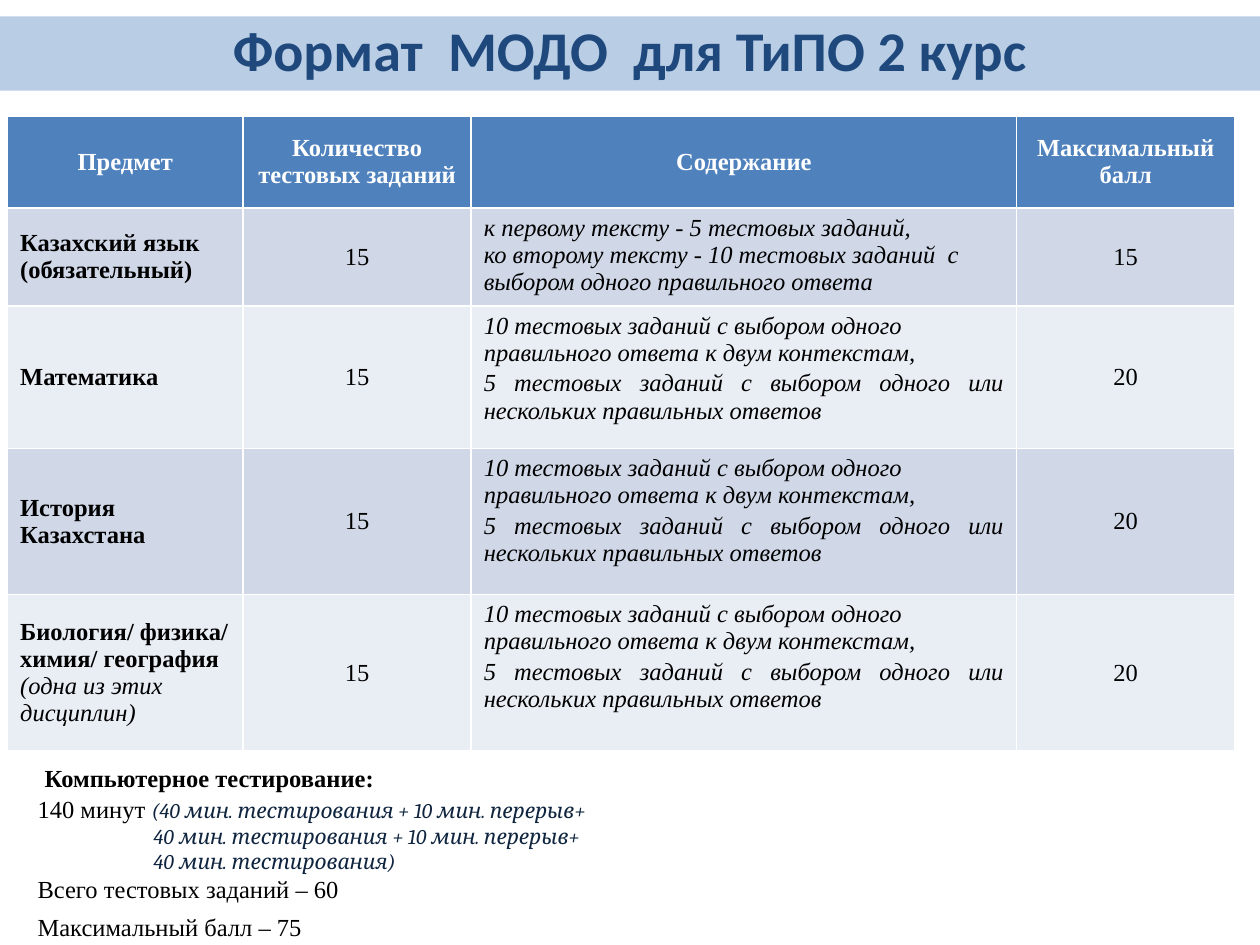
from pptx import Presentation
from pptx import util as u
from pptx.dml.color import RGBColor
from pptx.enum import text

BLACK = RGBColor(0x00, 0x00, 0x00)
WHITE = RGBColor(0xFF, 0xFF, 0xFF)
NAVY = RGBColor(0x1F, 0x49, 0x7D)
INK = RGBColor(0x0F, 0x24, 0x3E)
BAND = RGBColor(0xB9, 0xCD, 0xE5)
HEAD = RGBColor(0x4F, 0x81, 0xBD)
ROWS = [RGBColor(0xD0, 0xD8, 0xE8), RGBColor(0xE9, 0xED, 0xF4)]

SERIF = "Times New Roman"
LEFT = text.PP_ALIGN.LEFT
MID = text.PP_ALIGN.CENTER
FULL = text.PP_ALIGN.JUSTIFY

WIDTHS = [1.87, 1.81, 4.33, 1.73]
HEIGHTS = [0.73, 0.78, 1.13, 1.16, 1.24]
HEADS = ["Предмет", "Количество тестовых заданий", "Содержание", "Максимальный балл"]
KAZAKH = [
    "к первому тексту - 5 тестовых заданий,",
    "ко второму тексту - 10 тестовых заданий  с выбором одного правильного ответа",
]
TASKS = [
    "10 тестовых заданий с выбором одного правильного ответа к двум контекстам,",
    "5 тестовых заданий с выбором одного или нескольких правильных ответов",
]
TOPICS = [
    ("Казахский язык (обязательный)", "", KAZAKH, "15"),
    ("Математика", "", TASKS, "20"),
    ("История Казахстана", "", TASKS, "20"),
    ("Биология/ физика/ химия/ география ", "(одна из этих дисциплин)", TASKS, "20"),
]


def style(font, size=14, name=SERIF, color=BLACK, bold=False, slant=False):
    font.size = u.Pt(size)
    font.name = name
    font.color.rgb = color
    font.bold = bold
    font.italic = slant


def add_run(para, words, **look):
    run = para.add_run()
    run.text = words
    style(run.font, **look)


def add_line(frame, words="", align=LEFT, **look):
    para = frame.paragraphs[0]
    if para.runs:
        para = frame.add_paragraph()
    para.alignment = align
    if words:
        para.text = words
        style(para.font, **look)
    return para


def fill_cell(cell, color, middle=True):
    cell.fill.solid()
    cell.fill.fore_color.rgb = color
    if middle:
        cell.vertical_anchor = text.MSO_ANCHOR.MIDDLE
    return cell.text_frame


def add_title(slide):
    title = slide.shapes.title
    title.left, title.top = u.Inches(0), u.Inches(0.13)
    title.width, title.height = u.Inches(10), u.Inches(0.59)
    title.fill.solid()
    title.fill.fore_color.rgb = BAND
    para = add_line(title.text_frame, "Формат  МОДО  для ТиПО 2 курс", MID,
                    size=32, name="Calibri", color=NAVY, bold=True)
    para.line_spacing = 0.9


def add_topic(table, row, topic):
    name, note, tasks, score = topic
    color = ROWS[(row - 1) % 2]
    para = add_line(fill_cell(table.cell(row, 0), color))
    add_run(para, name, bold=True)
    if note:
        add_run(para, note, slant=True)
    for col, value in ((1, "15"), (3, score)):
        add_line(fill_cell(table.cell(row, col), color), value, MID)
    frame = fill_cell(table.cell(row, 2), color, middle=False)
    first = add_line(frame, tasks[0], slant=True)
    paired = tasks is TASKS
    add_line(frame, tasks[1], FULL if paired else LEFT, slant=True)
    if paired:
        first.space_after = u.Pt(2)


def add_grid(slide):
    table = slide.shapes.add_table(
        len(HEIGHTS), len(WIDTHS), u.Inches(0.06), u.Inches(0.92),
        u.Inches(sum(WIDTHS)), u.Inches(sum(HEIGHTS))).table
    for col, width in zip(table.columns, WIDTHS):
        col.width = u.Inches(width)
    for row, height in zip(table.rows, HEIGHTS):
        row.height = u.Inches(height)
    for col, head in enumerate(HEADS):
        add_line(fill_cell(table.cell(0, col), HEAD), head, MID, color=WHITE, bold=True)
    for row, topic in enumerate(TOPICS, 1):
        add_topic(table, row, topic)


def add_notes(slide):
    box = slide.shapes.add_textbox(u.Inches(0.2), u.Inches(5.95), u.Inches(9.53), u.Inches(1.58))
    frame = box.text_frame
    frame.word_wrap = True
    para = add_line(frame)
    add_run(para, " ", size=18, name="Calibri", bold=True)
    add_run(para, "Компьютерное тестирование:", bold=True)
    time = dict(size=12, name="Cambria", color=INK, slant=True)
    para = add_line(frame)
    add_run(para, "140 минут ")
    add_run(para, "(40 мин. тестирования + 10 мин. перерыв+", **time)
    for words in ("40 мин. тестирования + 10 мин. перерыв+", "40 мин. тестирования)"):
        para = add_line(frame, words, **time)
        para._p.get_or_add_pPr().set("marL", str(u.Inches(0.92)))
    add_line(frame, "Всего тестовых заданий – 60")
    add_line(frame, "Максимальный балл – 75").space_before = u.Pt(5)


def main():
    deck = Presentation()
    deck.slide_width, deck.slide_height = u.Inches(10), u.Inches(7.5)
    slide = deck.slides.add_slide(deck.slide_layouts[5])
    add_title(slide)
    add_grid(slide)
    add_notes(slide)
    deck.save("out.pptx")


if __name__ == "__main__":
    main()
